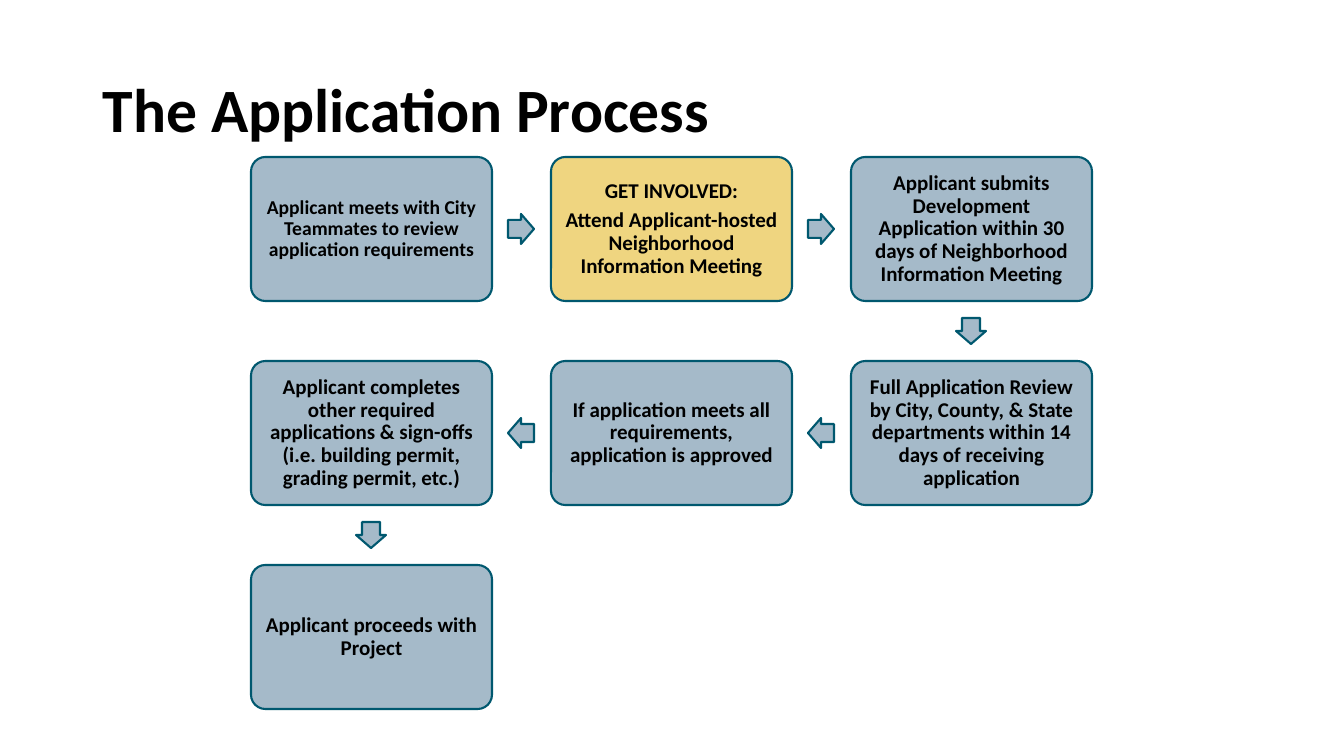
from pptx import Presentation
from pptx.dml.color import RGBColor
from pptx.enum.shapes import MSO_SHAPE
from pptx.enum.text import MSO_ANCHOR, PP_ALIGN
from pptx.util import Emu, Pt

ROUNDED_BOX = MSO_SHAPE.ROUNDED_RECTANGLE
ARROW = MSO_SHAPE.RIGHT_ARROW
MIDDLE = MSO_ANCHOR.MIDDLE
LEFT, CENTER = PP_ALIGN.LEFT, PP_ALIGN.CENTER

BLACK = RGBColor(0x00, 0x00, 0x00)
BLUE_GRAY = RGBColor(0xA5, 0xBA, 0xC9)
GOLD = RGBColor(0xEF, 0xD5, 0x80)
TEAL = RGBColor(0x00, 0x58, 0x6F)

PX = 914400 / 100.8
FONT = "Calibri"


def px(*lengths):
    return [Emu(round(length * PX)) for length in lengths]


def write_text(shape, *lines, size=15, align=CENTER, inset_x=7, inset_y=7, space_after=5):
    frame = shape.text_frame
    frame.word_wrap = True
    frame.vertical_anchor = MIDDLE
    frame.margin_left, frame.margin_right = px(inset_x, inset_x)
    frame.margin_top, frame.margin_bottom = px(inset_y, inset_y)
    for index, line in enumerate(lines):
        paragraph = frame.add_paragraph() if index else frame.paragraphs[0]
        paragraph.alignment = align
        paragraph.line_spacing = 0.9
        paragraph.space_after = Pt(space_after)
        run = paragraph.add_run()
        run.text = line
        run.font.name = FONT
        run.font.size = Pt(size)
        run.font.bold = True
        run.font.color.rgb = BLACK


presentation = Presentation()
presentation.slide_width, presentation.slide_height = px(1344, 756)
slide = presentation.slides.add_slide(presentation.slide_layouts[6])

# Title
title = slide.shapes.add_textbox(*px(93, 40, 1159, 146))
write_text(title, "The Application Process", size=44, align=LEFT,
           inset_x=10, inset_y=5, space_after=0)

# Steps in reading order: column, row, fill, text size, lines
steps = [
    (0, 0, BLUE_GRAY, 14,
     ["Applicant meets with City Teammates to review application requirements"]),
    (1, 0, GOLD, 15,
     ["GET INVOLVED:", "Attend Applicant-hosted Neighborhood Information Meeting"]),
    (2, 0, BLUE_GRAY, 15,
     ["Applicant submits Development Application within 30 days of "
      "Neighborhood Information Meeting"]),
    (2, 1, BLUE_GRAY, 15,
     ["Full Application Review by City, County, & State departments within "
      "14 days of receiving application"]),
    (1, 1, BLUE_GRAY, 15,
     ["If application meets all requirements, application is approved"]),
    (0, 1, BLUE_GRAY, 15,
     ["Applicant completes other required applications & sign-offs "
      "(i.e. building permit, grading permit, etc.)"]),
    (0, 2, BLUE_GRAY, 15, ["Applicant proceeds with Project"]),
]
GRID_LEFT, GRID_TOP = 251, 157
STEP_X, STEP_Y = 300, 204
BOX_WIDTH, BOX_HEIGHT = 241, 144
ARROW_WIDTH, ARROW_HEIGHT = 26, 30
ROTATION = {(1, 0): 0, (0, 1): 90, (-1, 0): 180}

flow_shapes = []
centers = []

# Step boxes
for column, row, fill, size, lines in steps:
    left, top = GRID_LEFT + column * STEP_X, GRID_TOP + row * STEP_Y
    box = slide.shapes.add_shape(ROUNDED_BOX, *px(left, top, BOX_WIDTH, BOX_HEIGHT))
    box.adjustments[0] = 0.1
    write_text(box, *lines, size=size)
    flow_shapes.append((box, fill))
    centers.append((left + BOX_WIDTH // 2, top + BOX_HEIGHT // 2))

# Arrows halfway between consecutive boxes
for index in range(len(steps) - 1):
    (x1, y1), (x2, y2) = centers[index:index + 2]
    left = (x1 + x2 - ARROW_WIDTH) // 2
    top = (y1 + y2 - ARROW_HEIGHT) // 2
    arrow = slide.shapes.add_shape(ARROW, *px(left, top, ARROW_WIDTH, ARROW_HEIGHT))
    arrow.adjustments[0] = 0.6
    arrow.adjustments[1] = 0.5
    arrow.rotation = ROTATION[(x2 - x1) // STEP_X, (y2 - y1) // STEP_Y]
    flow_shapes.append((arrow, BLUE_GRAY))

# Shared fill and outline
for shape, fill in flow_shapes:
    shape.shadow.inherit = False
    shape.fill.solid()
    shape.fill.fore_color.rgb = fill
    shape.line.color.rgb = TEAL
    shape.line.width = Pt(1.5)

presentation.save("out.pptx")
